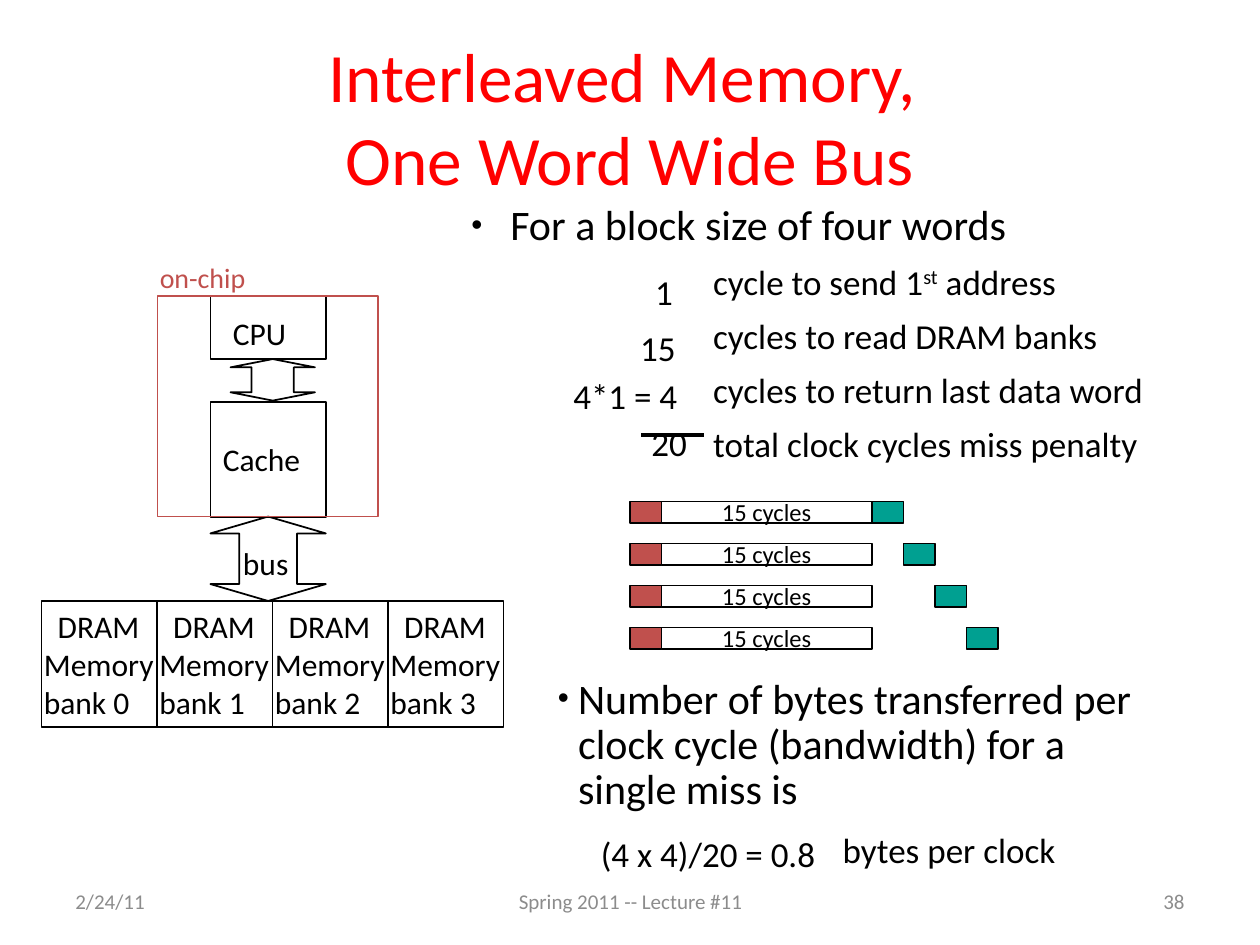
from dataclasses import dataclass

from lxml.etree import SubElement
from pptx import Presentation
from pptx.dml.color import RGBColor
from pptx.enum.shapes import MSO_CONNECTOR, MSO_SHAPE
from pptx.enum.text import MSO_ANCHOR, PP_ALIGN
from pptx.oxml.ns import qn
from pptx.util import Inches, Pt


@dataclass(frozen=True)
class Theme:
    font: str = "Calibri"
    ink: str = "000000"
    title_color: str = "FF0000"
    muted: str = "8C8C8C"
    red: str = "C0504D"
    teal: str = "00A091"
    title: float = 39.6
    heading: float = 24
    body: float = 20
    label: float = 18
    chip: float = 16
    cycle: float = 14
    footer: float = 12


THEME = Theme()

TITLE = "Interleaved Memory, \vOne Word Wide Bus"
FOOTERS = [
    ("2/24/11", 0.5, 2.33, PP_ALIGN.LEFT),
    ("Spring 2011 -- Lecture #11", 3.42, 3.17, PP_ALIGN.CENTER),
    ("38", 7.17, 2.33, PP_ALIGN.RIGHT),
]
BLOCK_HEADING = "For a block size of four words"
COST_LABELS = [
    "cycle to send 1",
    "cycles to read DRAM banks",
    "cycles to return last data word",
    "total clock cycles miss penalty",
]
ORDINAL = "st"
ORDINAL_REST = " address"
COSTS = [("1", 1.51, 0), ("15", 1.39, 13), ("4*1 = 4", 0.86, 8), ("20", 1.48, 8)]
BANDWIDTH = "Number of bytes transferred per\vclock cycle (bandwidth) for a\vsingle miss is"
BANDWIDTH_UNIT = "bytes per clock"
BANDWIDTH_VALUE = "(4 x 4)/20 = 0.8"
READ_TIME = "15 cycles"
BANK_COUNT = 4

BLOCK_WIDTH = 11 / 12
CORE_LEFT = 1.67
BANK_LEFT, BANK_TOP = 0.33, 4.77
TIMING_LEFT, TIMING_TOP, TIMING_STEP = 5, 3.98, 1 / 3
SLOT_WIDTH, READ_WIDTH, SLOT_HEIGHT = 0.25, 1.67, 0.17
ARROW_SHAPE = {"adj1": 50000, "adj2": 20000}


def style_runs(paragraph, size, color):
    for run in paragraph.runs:
        run.font.name = THEME.font
        run.font.size = Pt(size)
        run.font.color.rgb = RGBColor.from_string(color)


def set_text(frame, text, size, color=THEME.ink, align=PP_ALIGN.LEFT, anchor=MSO_ANCHOR.TOP):
    frame.text = text
    frame.vertical_anchor = anchor
    for paragraph in frame.paragraphs:
        paragraph.alignment = align
        style_runs(paragraph, size, color)


def add_text(box, text, size, wrap=True, insets=(0.1, 0.05), **style):
    frame = slide.shapes.add_textbox(*map(Inches, box)).text_frame
    frame.word_wrap = wrap
    frame.margin_left = frame.margin_right = Inches(insets[0])
    frame.margin_top = frame.margin_bottom = Inches(insets[1])
    set_text(frame, text, size, **style)
    return frame


def add_block(shapes, kind, box, line=THEME.ink, fill=None):
    block = shapes.add_shape(kind, *map(Inches, box))
    block.shadow.inherit = False
    if fill:
        block.fill.solid()
        block.fill.fore_color.rgb = RGBColor.from_string(fill)
    else:
        block.fill.background()
    block.line.color.rgb = RGBColor.from_string(line)
    block.line.width = Pt(1)
    return block


def space(paragraph, left=0, before=0, line=0.95, bullet=False):
    paragraph.line_spacing = line
    paragraph.space_before = Pt(before)
    properties = paragraph._p.get_or_add_pPr()
    properties.set("marL", str(Inches(left)))
    properties.set("indent", str(-Inches(left) if bullet else 0))
    if bullet:
        SubElement(properties, qn("a:buSzPct")).set("val", "75000")
        SubElement(properties, qn("a:buFont")).set("typeface", "Arial")
        SubElement(properties, qn("a:buChar")).set("char", "•")


def add_arrow(box):
    arrow = add_block(slide.shapes, MSO_SHAPE.UP_DOWN_ARROW, box)
    geometry = arrow._element.spPr.find(qn("a:prstGeom"))
    guides = geometry.find(qn("a:avLst"))
    for guide in list(guides):
        guides.remove(guide)
    for name, value in ARROW_SHAPE.items():
        guide = SubElement(guides, qn("a:gd"))
        guide.set("name", name)
        guide.set("fmla", f"val {value}")


def add_costs():
    labels = add_text((3.67, 1.59, 6.08, 2.76), "\n".join([BLOCK_HEADING, *COST_LABELS]),
                      THEME.body, insets=(0.07, 0.03))
    heading, *lines = labels.paragraphs
    style_runs(heading, THEME.heading, THEME.ink)
    space(heading, 0.31, line=0.9, bullet=True)
    for line in lines:
        space(line, 1.92, 8)
    address = lines[0]
    ordinal, rest = address.add_run(), address.add_run()
    ordinal.text, rest.text = ORDINAL, ORDINAL_REST
    style_runs(address, THEME.body, THEME.ink)
    ordinal.font._element.set("baseline", "30000")

    numbers = add_text((3.62, 2.18, 2.25, 2.04), "\n".join(cost for cost, *_ in COSTS),
                       THEME.body, insets=(0.07, 0.03))
    for paragraph, (_, left, before) in zip(numbers.paragraphs, COSTS):
        space(paragraph, left, before, 0.8)

    sum_rule = slide.shapes.add_connector(
        MSO_CONNECTOR.STRAIGHT, Inches(5.09), Inches(3.45), Inches(5.59), Inches(3.45))
    sum_rule.line.color.rgb = RGBColor.from_string(THEME.ink)
    sum_rule.line.width = Pt(2.25)
    SubElement(sum_rule._element.spPr, qn("a:effectLst"))


def add_processor():
    add_block(slide.shapes, MSO_SHAPE.RECTANGLE, (CORE_LEFT, 2.35, BLOCK_WIDTH, 0.5))
    add_text((1.75, 2.44, 0.85, 0.4), "CPU", THEME.label)
    add_arrow((1.83, 2.85, 0.67, 0.33))
    add_block(slide.shapes, MSO_SHAPE.RECTANGLE, (CORE_LEFT, 3.19, BLOCK_WIDTH, BLOCK_WIDTH))
    add_text((CORE_LEFT, 3.44, 1, 0.4), "Cache", THEME.label)
    add_arrow((CORE_LEFT, 4.1, BLOCK_WIDTH, 0.67))
    add_text((1.83, 4.27, 0.75, 0.4), "bus", THEME.label)
    add_block(slide.shapes, MSO_SHAPE.RECTANGLE, (1.25, 2.35, 1.75, 1.75), THEME.red)
    add_text((1.17, 2.02, 0.93, 0.37), "on-chip", THEME.chip, wrap=False, color=THEME.red)


def add_banks():
    for bank in range(BANK_COUNT):
        left = BANK_LEFT + bank * BLOCK_WIDTH
        add_block(slide.shapes, MSO_SHAPE.RECTANGLE, (left, BANK_TOP, BLOCK_WIDTH, 1))
        label = add_text((left - 0.08, BANK_TOP, 1.17, 1.01),
                         f"DRAM\nMemory\nbank {bank}", THEME.label)
        space(label.paragraphs[0], 0.11, line=1.0)


def add_timing():
    timing = slide.shapes.add_group_shape().shapes
    read_left = TIMING_LEFT + SLOT_WIDTH
    for bank in range(BANK_COUNT):
        top = TIMING_TOP + bank * TIMING_STEP
        return_left = read_left + READ_WIDTH + bank * SLOT_WIDTH
        add_block(timing, MSO_SHAPE.RECTANGLE,
                  (TIMING_LEFT, top, SLOT_WIDTH, SLOT_HEIGHT), fill=THEME.red)
        read = add_block(timing, MSO_SHAPE.RECTANGLE, (read_left, top, READ_WIDTH, SLOT_HEIGHT))
        read.text_frame.word_wrap = False
        set_text(read.text_frame, READ_TIME, THEME.cycle,
                 align=PP_ALIGN.CENTER, anchor=MSO_ANCHOR.MIDDLE)
        add_block(timing, MSO_SHAPE.RECTANGLE,
                  (return_left, top, SLOT_WIDTH, SLOT_HEIGHT), fill=THEME.teal)


def add_bandwidth():
    frame = add_text((4.33, 5.33, 5, 1.68), f"{BANDWIDTH}\n{BANDWIDTH_UNIT}", THEME.body)
    statement, unit = frame.paragraphs
    style_runs(statement, THEME.heading, THEME.ink)
    space(statement, 0.16, line=0.9, bullet=True)
    space(unit, 2.26, 10)
    value = add_text((4.17, 6.58, 3.08, 0.42), BANDWIDTH_VALUE, THEME.body)
    space(value.paragraphs[0], 0.5)


presentation = Presentation()
presentation.slide_width, presentation.slide_height = Inches(10), Inches(7.5)
slide = presentation.slides.add_slide(presentation.slide_layouts[6])

add_text((0.5, 0.3, 9, 1.25), TITLE, THEME.title, color=THEME.title_color,
         align=PP_ALIGN.CENTER, anchor=MSO_ANCHOR.MIDDLE)
for footer, left, width, align in FOOTERS:
    add_text((left, 6.95, width, 0.4), footer, THEME.footer, color=THEME.muted,
             align=align, anchor=MSO_ANCHOR.MIDDLE)
add_costs()
add_processor()
add_timing()
add_bandwidth()
add_banks()
presentation.save("out.pptx")
